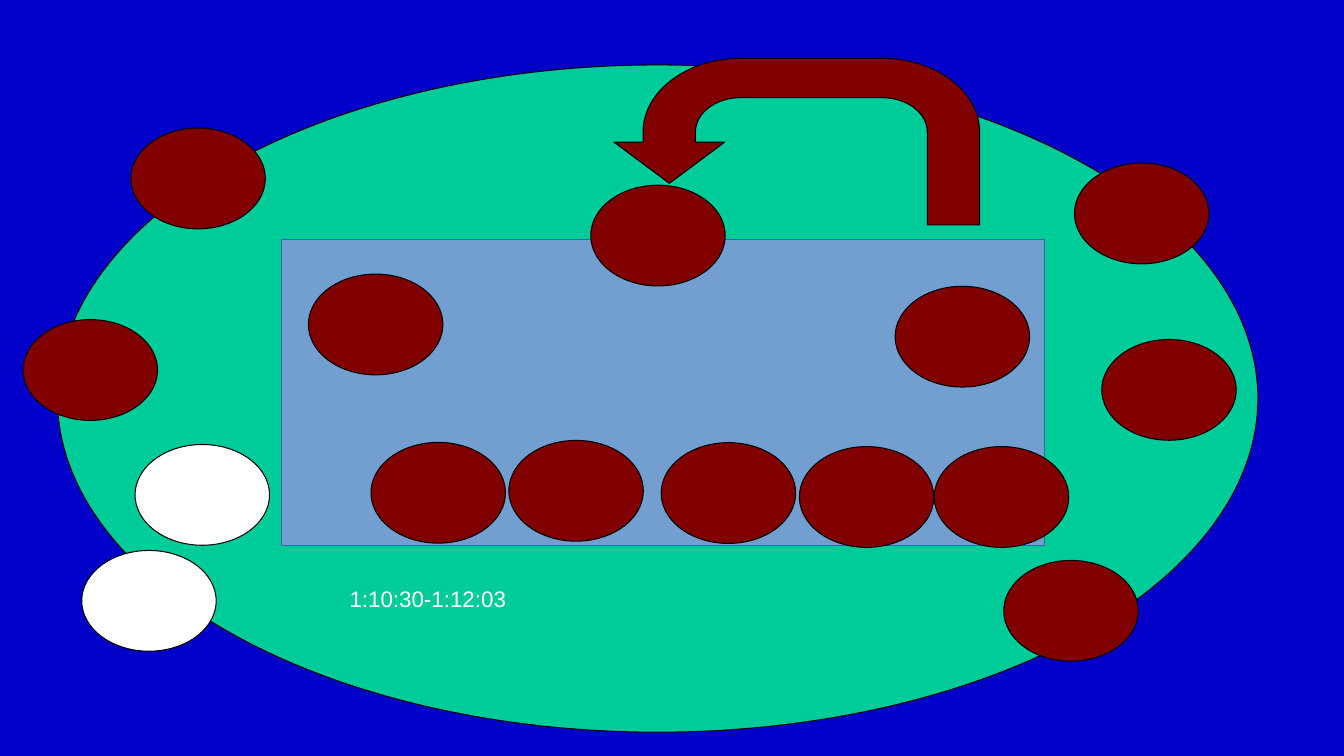
from math import cos, radians, sin
from typing import NamedTuple

from pptx import Presentation
from pptx.dml.color import RGBColor
from pptx.enum.shapes import MSO_SHAPE
from pptx.enum.text import MSO_ANCHOR, PP_ALIGN
from pptx.util import Pt

OVAL = MSO_SHAPE.OVAL
RECTANGLE = MSO_SHAPE.RECTANGLE
TOP = MSO_ANCHOR.TOP
LEFT = PP_ALIGN.LEFT

BLUE = RGBColor(0x00, 0x00, 0xC8)
GREEN = RGBColor(0x00, 0xCC, 0x99)
LIGHT_BLUE = RGBColor(0x72, 0x9F, 0xCF)
DARK_BLUE = RGBColor(0x34, 0x65, 0xA4)
MAROON = RGBColor(0x80, 0x00, 0x00)
WHITE = RGBColor(0xFF, 0xFF, 0xFF)
BLACK = RGBColor(0x00, 0x00, 0x00)

FONT = "Arial"
SEAT_WIDTH, SEAT_HEIGHT = 96, 72
ARC_STEPS = 24


class Seat(NamedTuple):
    left: float
    top: float
    fill: RGBColor = MAROON


class Bend(NamedTuple):
    """One quarter-ellipse of the arrow, angles in degrees from the right."""
    centre_x: float
    radius_x: float
    radius_y: float
    start: int
    end: int


SEATS = [
    # On the table: front row, then the two back corners and the head
    Seat(265, 316), Seat(363.5, 314.6), Seat(472.3, 316.2),
    Seat(571, 319), Seat(667.4, 319),
    Seat(220.3, 195.8), Seat(639.4, 204.5), Seat(422, 132.3),
    # Around the room: left side, then right side
    Seat(93.5, 91.5), Seat(16.5, 228.3),
    Seat(96.5, 317.5, WHITE), Seat(58.4, 393.2, WHITE),
    Seat(767.5, 116.5), Seat(787, 242.5), Seat(717, 400.3),
]

BEND_Y = 94.3
RIGHT_X, LEFT_X = 630, 529.2
OUTER_RADII = (69.8, 52.6)
INNER_RADII = (32.4, 24.5)
TAIL_Y = 160.7
BARB_Y = 101.5


def style(shape, fill: RGBColor, line: RGBColor) -> None:
    shape.shadow.inherit = False
    shape.fill.solid()
    shape.fill.fore_color.rgb = fill
    shape.line.color.rgb = line
    shape.line.width = Pt(0.75)


def add_figure(slide, kind, left: float, top: float, width: float,
               height: float, fill: RGBColor, line: RGBColor = BLACK) -> None:
    figure = slide.shapes.add_shape(kind, Pt(left), Pt(top), Pt(width), Pt(height))
    style(figure, fill, line)


def bend_points(bend: Bend) -> list[tuple[float, float]]:
    sweep = bend.end - bend.start
    angles = [radians(bend.start + sweep * step / ARC_STEPS)
              for step in range(ARC_STEPS + 1)]
    return [(bend.centre_x + bend.radius_x * cos(angle),
             BEND_Y - bend.radius_y * sin(angle)) for angle in angles]


def add_turning_arrow(slide) -> None:
    """Draw the arrow that leaves the right side and lands on the head seat."""
    shaft_left = LEFT_X - OUTER_RADII[0]
    shaft_right = LEFT_X - INNER_RADII[0]
    outline = [
        (RIGHT_X + OUTER_RADII[0], TAIL_Y),
        *bend_points(Bend(RIGHT_X, *OUTER_RADII, 0, 90)),
        *bend_points(Bend(LEFT_X, *OUTER_RADII, 90, 180)),
        (shaft_left, BARB_Y), (438.5, BARB_Y), (478.2, 131),
        (517.8, BARB_Y), (shaft_right, BARB_Y),
        *bend_points(Bend(LEFT_X, *INNER_RADII, 180, 90)),
        *bend_points(Bend(RIGHT_X, *INNER_RADII, 90, 0)),
        (RIGHT_X + INNER_RADII[0], TAIL_Y),
    ]
    start, *corners = [(Pt(x), Pt(y)) for x, y in outline]
    builder = slide.shapes.build_freeform(*start)
    builder.add_line_segments(corners, close=True)
    style(builder.convert_to_shape(), MAROON, BLACK)


def add_text(slide, text: str, *, left: float, top: float, width: float,
             height: float, size: float, color: RGBColor) -> None:
    box = slide.shapes.add_textbox(Pt(left), Pt(top), Pt(width), Pt(height))
    frame = box.text_frame
    frame.word_wrap = True
    frame.vertical_anchor = TOP
    paragraph = frame.paragraphs[0]
    paragraph.alignment = LEFT
    run = paragraph.add_run()
    run.text = text
    run.font.name = FONT
    run.font.size = Pt(size)
    run.font.color.rgb = color


def main() -> None:
    presentation = Presentation()
    presentation.slide_width = Pt(960)
    presentation.slide_height = Pt(540)
    slide = presentation.slides.add_slide(presentation.slide_layouts[6])
    slide.background.fill.solid()
    slide.background.fill.fore_color.rgb = BLUE

    add_figure(slide, OVAL, 41, 46.4, 857.5, 476.6, GREEN)
    add_figure(slide, RECTANGLE, 201, 171, 545, 218.6, LIGHT_BLUE, DARK_BLUE)
    add_turning_arrow(slide)
    for seat in SEATS:
        add_figure(slide, OVAL, seat.left, seat.top,
                   SEAT_WIDTH, SEAT_HEIGHT, seat.fill)
    add_text(slide, "1:10:30-1:12:03", left=242.6, top=414.7,
             width=328.3, height=26.6, size=16, color=WHITE)

    presentation.save("out.pptx")


if __name__ == "__main__":
    main()
